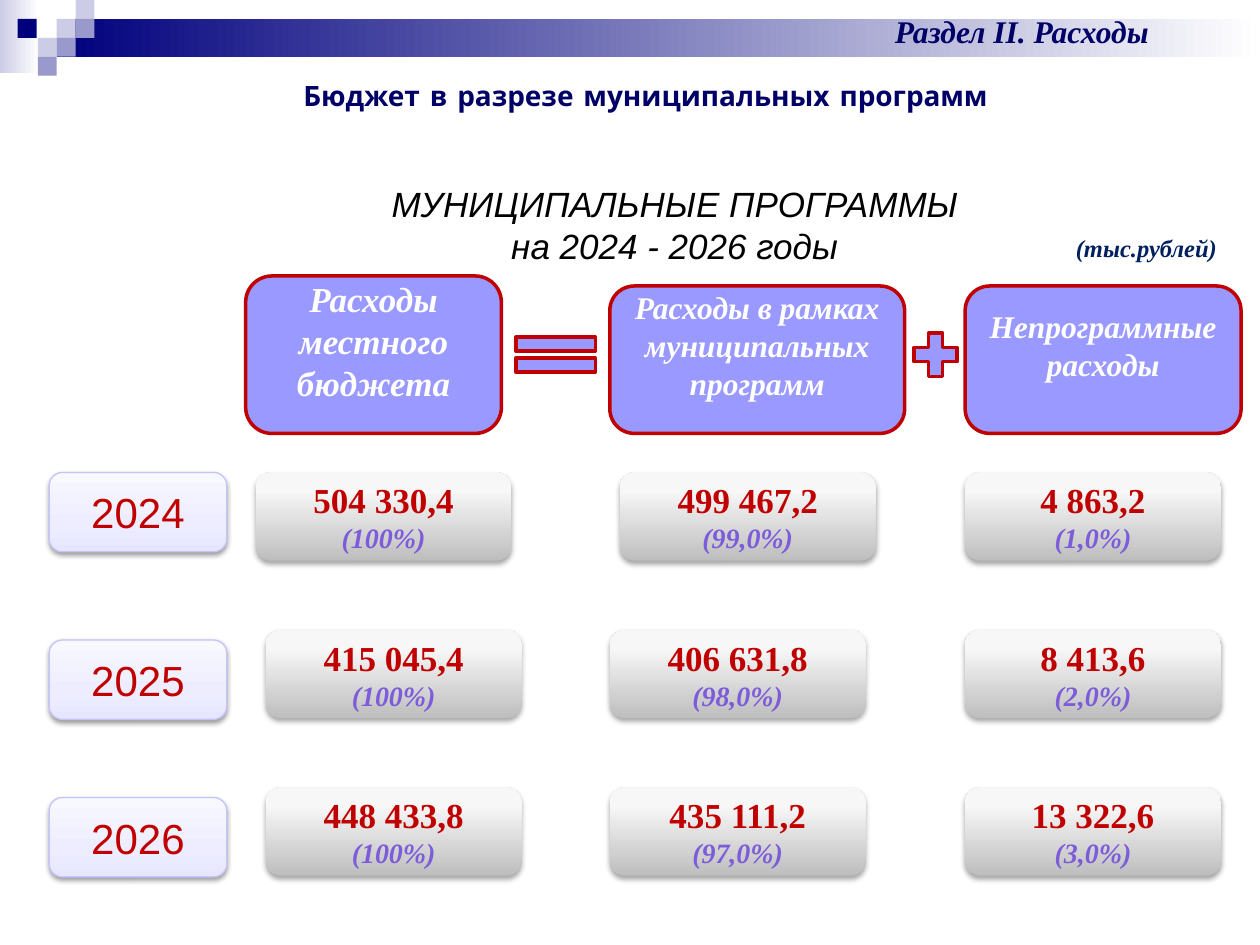
from lxml.etree import SubElement
from pptx import Presentation
from pptx.dml.color import RGBColor
from pptx.enum.shapes import MSO_SHAPE
from pptx.enum.text import MSO_ANCHOR, PP_ALIGN
from pptx.oxml.ns import qn
from pptx.util import Inches, Pt

COLORS = {
    "navy": "00007D", "lavender": "CCCCE6", "slate": "9999CC", "white": "FFFFFF",
    "periwinkle": "9999FF", "red": "C00000", "violet": "7D5CDA", "black": "000000",
    "title": "000066", "unit": "002060", "year_line": "C4C4FB",
}
GRAY = [(0, "BEBEBE"), (80, "F7F7F7"), (100, "F8F8F8")]
LILAC = [(0, "E6E6FF"), (35, "EDEDFF"), (100, "F8F8FF")]
SERIF = "Times New Roman"

prs = Presentation()
prs.slide_width, prs.slide_height = Inches(10), Inches(7.5)
s = prs.slides.add_slide(prs.slide_layouts[5])


def add_box(kind, x, y, w, h, fill, angle=90, line=None, width=2, shadow=None):
    """Add a shape; fill is a colour or gradient stops, shadow is (opacity %, distance pt)."""
    sp = s.shapes.add_shape(kind, Inches(x), Inches(y), Inches(w), Inches(h))
    if isinstance(fill, str):
        sp.fill.solid()
        sp.fill.fore_color.rgb = RGBColor.from_string(fill)
    else:
        sp.fill.gradient()
        sp.fill.gradient_angle = angle
        stops = sp.element.spPr.find(".//" + qn("a:gsLst"))
        for old in list(stops):
            stops.remove(old)
        for pos, color in fill:
            gs = SubElement(stops, qn("a:gs"), pos=str(pos * 1000))
            SubElement(gs, qn("a:srgbClr"), val=color)
    if line:
        sp.line.color.rgb = RGBColor.from_string(line)
        sp.line.width = Pt(width)
    else:
        sp.line.fill.background()
    sp.shadow.inherit = False
    if shadow:
        opacity, distance = shadow
        effects = sp.element.spPr.find(qn("a:effectLst"))
        outer = SubElement(effects, qn("a:outerShdw"), blurRad=str(Pt(3.1)),
                           dist=str(Pt(distance)), dir="5400000", rotWithShape="0")
        color = SubElement(outer, qn("a:srgbClr"), val=COLORS["black"])
        SubElement(color, qn("a:alpha"), val=str(opacity * 1000))
    return sp


def add_text(sp, text, size, color, font=SERIF, bold=False, italic=False,
             align=PP_ALIGN.CENTER, anchor=MSO_ANCHOR.MIDDLE, wrap=True,
             left=0.1, bottom=0.05, more=False):
    """Write one paragraph into a shape; more=True appends it to the existing text."""
    tf = sp.text_frame
    tf.word_wrap, tf.vertical_anchor = wrap, anchor
    tf.margin_left, tf.margin_right = Inches(left), Inches(0.1)
    tf.margin_top, tf.margin_bottom = Inches(0.05), Inches(bottom)
    p = tf.add_paragraph() if more else tf.paragraphs[0]
    p.alignment = align
    r = p.add_run()
    r.text = text
    r.font.name, r.font.size = font, Pt(size)
    r.font.bold, r.font.italic = bold, italic
    r.font.color.rgb = RGBColor.from_string(color)


# Banner: gradient strips and small squares
RECT, ROUND = MSO_SHAPE.RECTANGLE, MSO_SHAPE.ROUNDED_RECTANGLE
add_box(RECT, 0, 0, 0.31, 0.58, [(0, COLORS["lavender"]), (100, COLORS["white"])], angle=0)
add_box(RECT, 0.45, 0.15, 9.55, 0.3, [(0, COLORS["navy"]), (100, COLORS["white"])], angle=0)
for x, y, color in [
    (0.45, 0.15, "lavender"), (0.6, 0, "lavender"), (0.6, 0.15, "slate"),
    (0.3, 0.3, "lavender"), (0.14, 0.15, "navy"), (0.45, 0.3, "slate"), (0.3, 0.45, "slate"),
]:
    add_box(RECT, x, y, 0.15, 0.15, COLORS[color])

# Slide title
title = s.shapes.title
title.left, title.top, title.width, title.height = map(Inches, (0.88, 0.57, 8.49, 0.37))
add_text(title, "Бюджет в разрезе муниципальных программ", 16, COLORS["title"],
         font="Comic Neue", bold=True, anchor=MSO_ANCHOR.TOP)

# Section name, heading and unit
section = s.shapes.add_textbox(Inches(6.26), Inches(0.05), Inches(3.7), Inches(0.4))
add_text(section, "Раздел II. Расходы", 18, COLORS["title"], bold=True, italic=True,
         anchor=MSO_ANCHOR.TOP)
heading = s.shapes.add_textbox(Inches(0.84), Inches(1.39), Inches(8.53), Inches(1.08))
for i, text in enumerate(["МУНИЦИПАЛЬНЫЕ ПРОГРАММЫ", "на 2024 - 2026 годы"]):
    add_text(heading, text, 20, COLORS["black"], font="Arial", italic=True,
             left=0.6, bottom=0.35, more=i > 0)
unit = s.shapes.add_textbox(Inches(8.44), Inches(1.8), Inches(1.33), Inches(0.34))
add_text(unit, "(тыс.рублей)", 14, COLORS["unit"], bold=True, italic=True,
         align=PP_ALIGN.LEFT, anchor=MSO_ANCHOR.TOP, wrap=False)

# Equation: total = programmes + other
for x, y, w, h, size, text in [
    (1.95, 2.19, 2.03, 1.25, 20, "Расходы местного бюджета"),
    (4.84, 2.27, 2.34, 1.17, 18, "Расходы в рамках муниципальных программ"),
    (7.66, 2.27, 2.19, 1.17, 18, "Непрограммные расходы"),
]:
    term = add_box(ROUND, x, y, w, h, COLORS["periwinkle"], line=COLORS["red"])
    add_text(term, text, size, COLORS["white"], bold=True, italic=True, bottom=0.28)
for kind, x, w in [(MSO_SHAPE.MATH_EQUAL, 3.98, 0.86), (MSO_SHAPE.MATH_PLUS, 7.19, 0.47)]:
    add_box(kind, x, 2.58, w, 0.47, COLORS["periwinkle"], line=COLORS["red"])

# Yearly rows: year label, then amount and share under each term
for year, year_y, y, columns, values in [
    ("2024", 3.75, 3.75, (2.03, 4.92, 7.66),
     [("504 330,4", "(100%)"), ("499 467,2", "(99,0%)"), ("4 863,2", "(1,0%)")]),
    ("2025", 5.08, 5, (2.11, 4.84, 7.66),
     [("415 045,4", "(100%)"), ("406 631,8", "(98,0%)"), ("8 413,6", "(2,0%)")]),
    ("2026", 6.33, 6.25, (2.11, 4.84, 7.66),
     [("448 433,8", "(100%)"), ("435 111,2", "(97,0%)"), ("13 322,6", "(3,0%)")]),
]:
    label = add_box(ROUND, 0.39, year_y, 1.41, 0.63, LILAC, line=COLORS["year_line"],
                    width=0.75, shadow=(38, 1.6))
    add_text(label, year, 24, COLORS["red"], font="Arial")
    for x, (amount, share) in zip(columns, values):
        card = add_box(ROUND, x, y, 2.03, 0.7, GRAY, shadow=(35, 1.8))
        add_text(card, amount, 20, COLORS["red"], bold=True)
        add_text(card, share, 16, COLORS["violet"], bold=True, italic=True, more=True)

prs.save("out.pptx")
